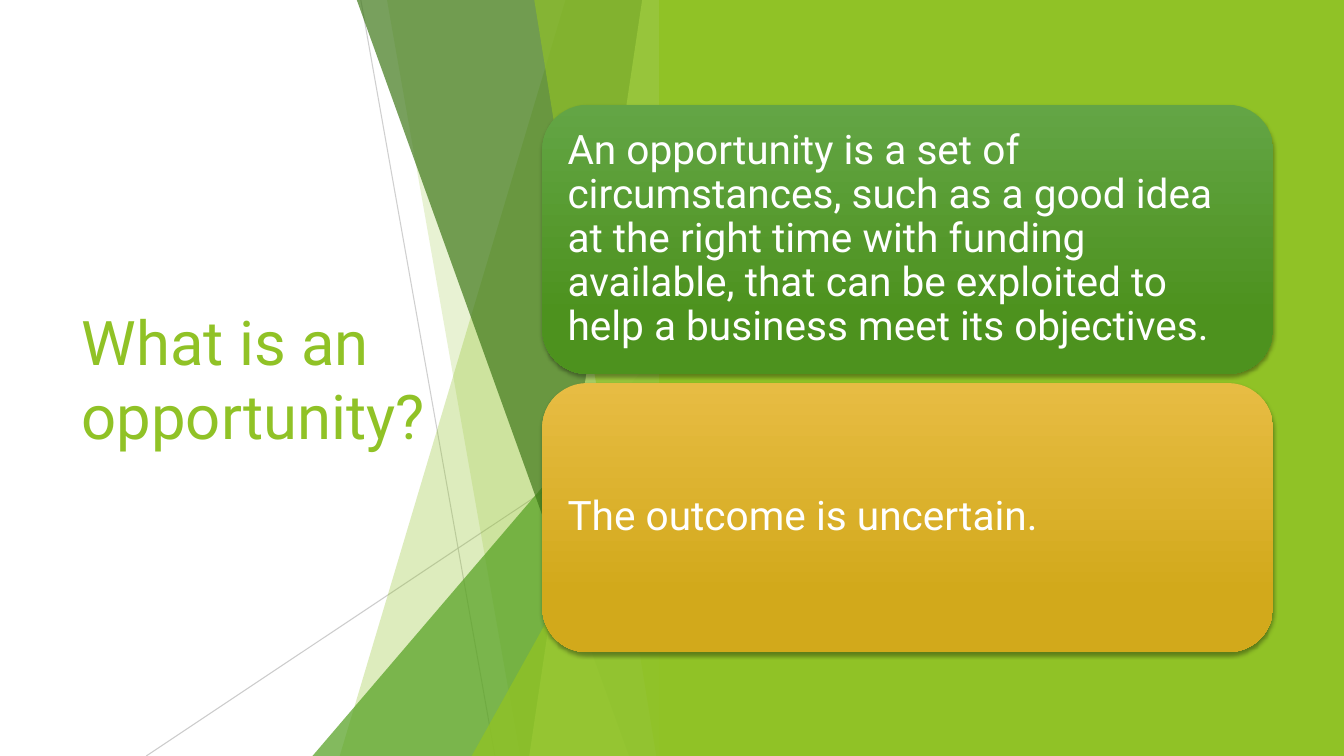
from dataclasses import dataclass

from lxml.etree import SubElement
from pptx import Presentation
from pptx.dml.color import RGBColor
from pptx.enum.shapes import MSO_CONNECTOR, MSO_SHAPE
from pptx.enum.text import MSO_ANCHOR, PP_ALIGN
from pptx.oxml.ns import qn
from pptx.util import Emu, Inches, Pt

WIDTH, HEIGHT = Inches(13.333), Inches(7.5)
FONT = "Roboto"
COLORS = {
    "lime": "90C226", "pale": "C0E474", "leaf": "54A021", "forest": "3F7819",
    "ray": "BFBFBF", "white": "FFFFFF", "shadow": "000000",
    "green top": "63A545", "green base": "4D921E",
    "gold top": "E7BC43", "gold base": "D2A91B",
}
FACET_RIGHT = 50
CARD_LEFT, CARD_TOP, CARD_WIDTH, CARD_HEIGHT, CARD_PITCH = 40.35, 13.87, 54.38, 35.6, 36.8


@dataclass(frozen=True)
class Ray:
    start: tuple[float, float]
    end: tuple[float, float]
    opacity: int


@dataclass(frozen=True)
class Facet:
    """A pane from its top left and bottom left corners to the shared right edge."""
    top_left: float
    bottom_left: float
    color: str
    opacity: int


@dataclass(frozen=True)
class Wedge:
    left: float
    top: float
    color: str
    opacity: int


@dataclass(frozen=True)
class Card:
    text: str
    tone: str


RAYS = [Ray((26.85, 0), (36.83, 100), 75), Ray((49.95, 53.73), (10.88, 100), 80)]
PANES = [
    Facet(42.08, 25.28, "lime", 30),
    Facet(28.8, 38.7, "lime", 20),
    Wedge(23.25, 44.4, "leaf", 72),
    Facet(26.55, 46.8, "forest", 70),
    Facet(47.78, 39.38, "pale", 70),
    Facet(39.75, 48.83, "lime", 65),
    Wedge(35.1, 52.4, "lime", 80),
]
CARDS = [
    Card("An opportunity is a set of circumstances, such as a good idea at the right time "
         "with funding available, that can be exploited to help a business meet its "
         "objectives.", "green"),
    Card("The outcome is uncertain.", "gold"),
]


def across(percent: float) -> Emu:
    return Emu(round(WIDTH * percent / 100))


def down(percent: float) -> Emu:
    return Emu(round(HEIGHT * percent / 100))


def area(left: float, top: float, width: float, height: float) -> tuple[Emu, ...]:
    return across(left), down(top), across(width), down(height)


def rgb(name: str) -> RGBColor:
    return RGBColor.from_string(COLORS[name])


def set_opacity(element, percent: int) -> None:
    for color in element.iter(qn("a:srgbClr")):
        SubElement(color, qn("a:alpha"), val=str(percent * 1000))


def paint(shape, color: str, opacity: int = 100) -> None:
    shape.shadow.inherit = False
    shape.line.fill.background()
    shape.fill.solid()
    shape.fill.fore_color.rgb = rgb(color)
    if opacity < 100:
        set_opacity(shape.fill._xPr, opacity)


def write(shape, text: str, *, size: float, color: str, spacing: float = 1.0,
          inset: tuple[float, float] = (0.75, 0.67)) -> None:
    frame = shape.text_frame
    frame.word_wrap = True
    frame.vertical_anchor = MSO_ANCHOR.MIDDLE
    frame.margin_left = frame.margin_right = across(inset[0])
    frame.margin_top = frame.margin_bottom = down(inset[1])
    para = frame.paragraphs[0]
    para.alignment = PP_ALIGN.LEFT
    para.line_spacing = spacing
    span = para.add_run()
    span.text = text
    span.font.name = FONT
    span.font.size = Pt(size)
    span.font.color.rgb = rgb(color)


def draw_ray(page, ray: Ray) -> None:
    (x1, y1), (x2, y2) = ray.start, ray.end
    line = page.shapes.add_connector(
        MSO_CONNECTOR.STRAIGHT, across(x1), down(y1), across(x2), down(y2))
    line.line.width = Pt(0.75)
    line.line.color.rgb = rgb("ray")
    properties = line._element.spPr
    set_opacity(properties, ray.opacity)
    SubElement(properties, qn("a:effectLst"))


def draw_pane(page, pane: Facet | Wedge) -> None:
    if isinstance(pane, Wedge):
        shape = page.shapes.add_shape(
            MSO_SHAPE.ISOSCELES_TRIANGLE,
            *area(pane.left, pane.top, FACET_RIGHT - pane.left, 100 - pane.top))
        shape.adjustments[0] = 1
    else:
        outline = page.shapes.build_freeform(across(pane.top_left), 0)
        corners = [(FACET_RIGHT, 0), (FACET_RIGHT, 100), (pane.bottom_left, 100)]
        outline.add_line_segments([(across(x), down(y)) for x, y in corners])
        shape = outline.convert_to_shape()
    paint(shape, pane.color, pane.opacity)


def add_soft_shadow(shape) -> None:
    shape.shadow.inherit = False
    effects = shape._element.spPr.find(qn("a:effectLst"))
    shadow = SubElement(effects, qn("a:outerShdw"), blurRad=str(Pt(3)), dist=str(Pt(2)),
                        dir="5400000", rotWithShape="0")
    SubElement(shadow, qn("a:srgbClr"), val=COLORS["shadow"])
    set_opacity(shadow, 35)


def draw_card(page, card: Card, row: int) -> None:
    box = page.shapes.add_shape(
        MSO_SHAPE.ROUNDED_RECTANGLE,
        *area(CARD_LEFT, CARD_TOP + row * CARD_PITCH, CARD_WIDTH, CARD_HEIGHT))
    box.line.fill.background()
    box.fill.gradient()
    box.fill.gradient_angle = 270
    ends = [("top", 0), ("base", 0.78)]
    for stop, (end, position) in zip(box.fill.gradient_stops, ends):
        stop.color.rgb = rgb(f"{card.tone} {end}")
        stop.position = position
    add_soft_shadow(box)
    write(box, card.text, size=29, color="white", spacing=0.9, inset=(0.9, 1.6))


def main() -> None:
    deck = Presentation()
    deck.slide_width, deck.slide_height = WIDTH, HEIGHT
    page = deck.slides.add_slide(deck.slide_layouts[6])

    title = page.shapes.add_textbox(*area(5.33, 20.13, 29.1, 59.73))
    write(title, "What is an opportunity?", size=44, color="lime")
    for ray in RAYS:
        draw_ray(page, ray)
    for pane in PANES:
        draw_pane(page, pane)
    panel = page.shapes.add_shape(MSO_SHAPE.RECTANGLE, *area(49.05, 0, 50.95, 100))
    paint(panel, "lime")
    for row, card in enumerate(CARDS):
        draw_card(page, card, row)

    deck.save("out.pptx")


if __name__ == "__main__":
    main()
